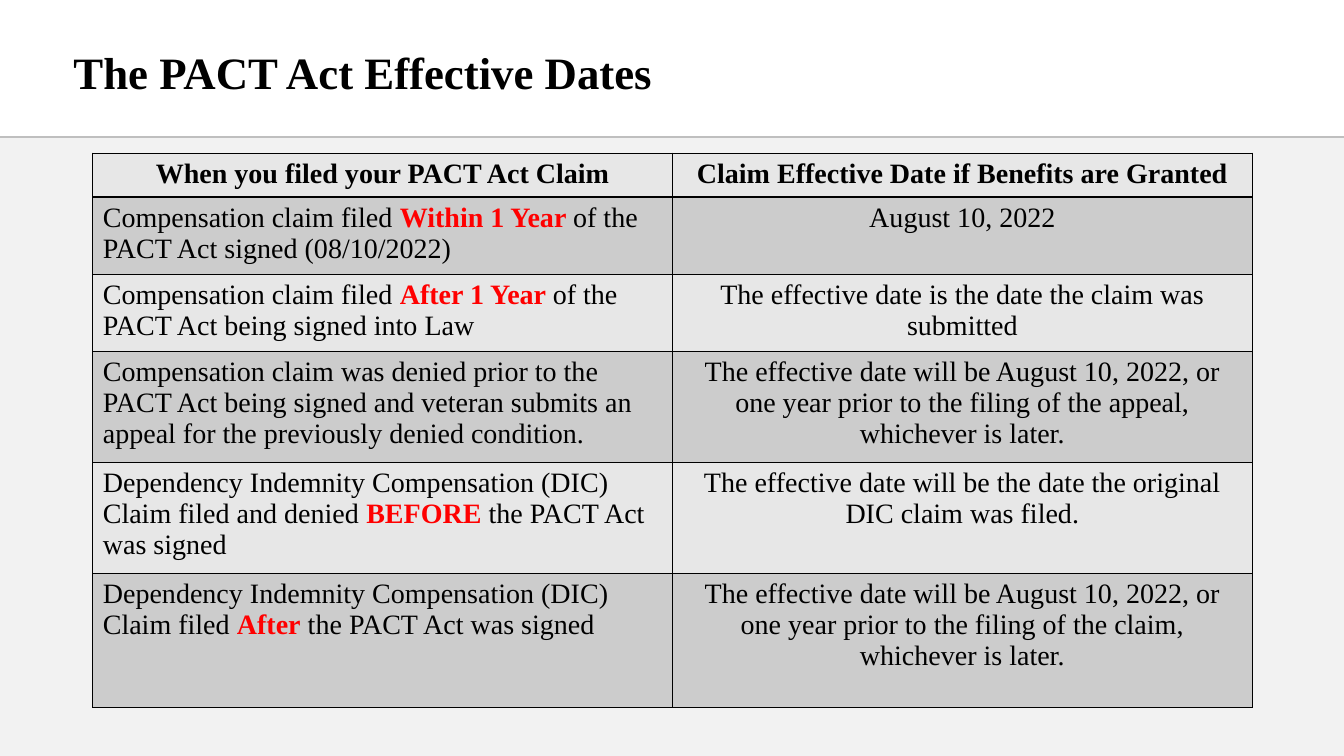
import pptx
import pptx.util
import pptx.dml.color
import pptx.enum.shapes
import pptx.enum.text
import pptx.oxml
import pptx.oxml.ns
from pptx.util import Inches

# Content: red bold words stand between bars
TITLE = "The PACT Act Effective Dates"
ROWS = [
    ("When you filed your PACT Act Claim",
     "Claim Effective Date if Benefits are Granted", 0.41),
    ("Compensation claim filed |Within 1 Year |of the PACT Act signed (08/10/2022)",
     "August 10, 2022", 0.72),
    ("Compensation claim filed |After 1 Year |of the PACT Act being signed into Law",
     "The effective date is the date the claim was submitted", 0.72),
    ("Compensation claim was denied prior to the PACT Act being signed and "
     "veteran submits an appeal for the previously denied condition.",
     "The effective date will be August 10, 2022, or one year prior to the "
     "filing of the appeal, whichever is later.", 1.02),
    ("Dependency Indemnity Compensation (DIC) Claim filed and denied |BEFORE| "
     "the PACT Act was signed",
     "The effective date will be the date the original DIC claim was filed.", 1.03),
    ("Dependency Indemnity Compensation (DIC) Claim filed |After| the PACT Act was signed",
     "The effective date will be August 10, 2022, or one year prior to the "
     "filing of the claim, whichever is later.", 1.33),
]
FACE = "Times New Roman"
BANDS = ("E7E7E7", "CCCCCC")
WIDE, HIGH, RULE = 13.33, 7.5, 1.36
COL = 5.75


def color(code):
    return pptx.dml.color.RGBColor.from_string(code)


def style(font, size, bold):
    font.name, font.size, font.bold = FACE, pptx.util.Pt(size), bold
    font.color.rgb = color("000000")


def border(cell):
    props = cell._tc.get_or_add_tcPr()
    for spot, side in enumerate(("lnL", "lnR", "lnT", "lnB")):
        props.insert(spot, pptx.oxml.parse_xml(
            f'<a:{side} {pptx.oxml.ns.nsdecls("a")} w="12700"><a:solidFill>'
            f'<a:srgbClr val="000000"/></a:solidFill></a:{side}>'))


def fill_cell(cell, text, band, bold, center):
    cell.fill.solid()
    cell.fill.fore_color.rgb = color(band)
    border(cell)
    para = cell.text_frame.paragraphs[0]
    if center:
        para.alignment = pptx.enum.text.PP_ALIGN.CENTER
    style(para.font, 20, bold)
    for spot, part in enumerate(text.split("|")):
        run = para.add_run()
        run.text = part
        style(run.font, 20, bold)
        if spot == 1:
            run.font.bold = True
            run.font.color.rgb = color("FF0000")


deck = pptx.Presentation()
deck.slide_width, deck.slide_height = Inches(WIDE), Inches(HIGH)
slide = deck.slides.add_slide(deck.slide_layouts[6])
shapes = slide.shapes

# Grey body panel and rule
panel = shapes.add_shape(pptx.enum.shapes.MSO_SHAPE.RECTANGLE, 0, Inches(RULE),
                         Inches(WIDE), Inches(HIGH - RULE))
panel.shadow.inherit = False
panel.fill.solid()
panel.fill.fore_color.rgb = color("F2F2F2")
panel.line.fill.background()

rule = shapes.add_connector(pptx.enum.shapes.MSO_CONNECTOR.STRAIGHT, 0, Inches(RULE),
                            Inches(WIDE), Inches(RULE))
rule.line.color.rgb = color("BFBFBF")
rule.line.width = pptx.util.Pt(1.5)
rule._element.spPr.append(
    pptx.oxml.parse_xml(f'<a:effectLst {pptx.oxml.ns.nsdecls("a")}/>'))

# Title
frame = shapes.add_textbox(Inches(0.63), Inches(0.02), Inches(12.08),
                           Inches(1.45)).text_frame
frame.word_wrap = True
frame.vertical_anchor = pptx.enum.text.MSO_ANCHOR.MIDDLE
head = frame.paragraphs[0]
head.text = TITLE
head.line_spacing = 0.9
style(head.font, 32, True)

# Table of dates
total = sum(row[2] for row in ROWS)
table = shapes.add_table(len(ROWS), 2, Inches(0.92), Inches(1.52),
                         Inches(2 * COL), Inches(total)).table
for col in table.columns:
    col.width = Inches(COL)
for i, (claim, date, tall) in enumerate(ROWS):
    table.rows[i].height = Inches(tall)
    for j, text in enumerate((claim, date)):
        fill_cell(table.cell(i, j), text, BANDS[i % 2], i == 0, i == 0 or j == 1)

deck.save("out.pptx")
